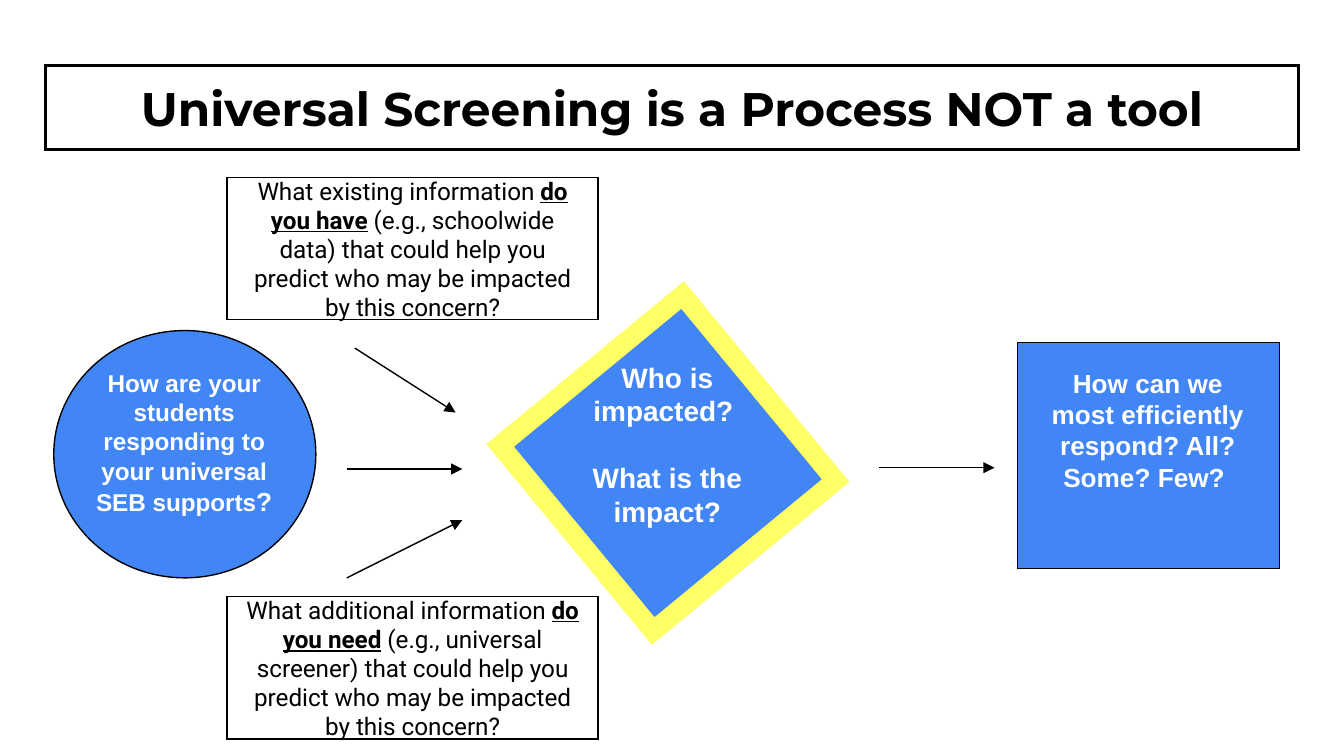
from dataclasses import dataclass

from pptx import Presentation
from pptx.dml.color import RGBColor
from pptx.enum.shapes import MSO_CONNECTOR, MSO_SHAPE
from pptx.enum.text import MSO_ANCHOR, MSO_AUTO_SIZE, PP_ALIGN
from pptx.oxml.ns import qn
from pptx.util import Inches, Pt
from lxml.etree import SubElement


@dataclass(frozen=True)
class Theme:
    """Colours, fonts and sizes of the slide."""
    ink: RGBColor = RGBColor(0x00, 0x00, 0x00)
    white: RGBColor = RGBColor(0xFF, 0xFF, 0xFF)
    blue: RGBColor = RGBColor(0x42, 0x85, 0xF4)
    yellow: RGBColor = RGBColor(0xFF, 0xFF, 0x66)
    title_font: str = "Montserrat"
    label_font: str = "Arial"
    note_font: str = "Roboto"
    title_size: float = 25.2
    small: float = 13
    medium: float = 14
    large: float = 15
    thin: float = 0.75
    frame: float = 1.5
    border: float = 10.5


THEME = Theme()


def set_outline(sp, color, width):
    """Give a shape a solid outline with sharp corners."""
    sp.line.color.rgb = color
    sp.line.width = Pt(width)
    SubElement(sp.line._get_or_add_ln(), qn("a:miter"), lim="800000")


def set_frame(tf, anchor, side, top):
    """Set wrapping, anchor and insets of a text frame."""
    tf.word_wrap = True
    tf.auto_size = MSO_AUTO_SIZE.NONE
    tf.vertical_anchor = anchor
    tf.margin_left = tf.margin_right = Inches(side)
    tf.margin_top = tf.margin_bottom = Inches(top)


def add_run(p, text, font, size, color, bold=False, underline=False):
    """Add one formatted run to a centred paragraph."""
    p.alignment = PP_ALIGN.CENTER
    r = p.add_run()
    r.text = text
    r.font.name = font
    r.font.size = Pt(size)
    r.font.color.rgb = color
    r.font.bold = bold
    r.font.underline = underline


def add_title(s, text):
    """Place and format the framed title."""
    sp = s.shapes.title
    sp.left, sp.top, sp.width, sp.height = map(Inches, (0.34, 0.49, 9.32, 0.62))
    set_outline(sp, THEME.ink, THEME.frame)
    set_frame(sp.text_frame, MSO_ANCHOR.MIDDLE, 0.1, 0.1)
    add_run(sp.text_frame.paragraphs[0], text, THEME.title_font,
            THEME.title_size, THEME.ink, bold=True)


def add_box(s, kind, box, fill=None, line=THEME.ink, width=THEME.thin, rotation=0):
    """Add an outlined shape, filled if a colour is given."""
    sp = s.shapes.add_shape(kind, *map(Inches, box))
    sp.shadow.inherit = False
    sp.rotation = rotation
    if fill is None:
        sp.fill.background()
    else:
        sp.fill.solid()
        sp.fill.fore_color.rgb = fill
    set_outline(sp, line, width)
    return sp


def add_label(s, box, paragraphs, gap=0):
    """Add a white bold label; each paragraph is a list of (text, size)."""
    tf = s.shapes.add_textbox(*map(Inches, box)).text_frame
    set_frame(tf, MSO_ANCHOR.TOP, 0.07, 0.04)
    for i, runs in enumerate(paragraphs):
        p = tf.add_paragraph() if i else tf.paragraphs[0]
        p.space_before = Pt(gap if i else 0)
        for text, size in runs:
            add_run(p, text, THEME.label_font, size, THEME.white, bold=True)


def add_note(s, top, before, stressed, after):
    """Add a framed question with a stressed middle part."""
    sp = add_box(s, MSO_SHAPE.RECTANGLE, (1.69, top, 2.76, 1.06))
    set_frame(sp.text_frame, MSO_ANCHOR.MIDDLE, 0.1, 0.1)
    p = sp.text_frame.paragraphs[0]
    for text, strong in ((before, False), (stressed, True), (after, False)):
        add_run(p, text, THEME.note_font, THEME.small, THEME.ink, strong, strong)


def add_arrow(s, *ends):
    """Add a thin arrow from (x1, y1) to (x2, y2)."""
    c = s.shapes.add_connector(MSO_CONNECTOR.STRAIGHT, *map(Inches, ends))
    c.line.color.rgb = THEME.ink
    c.line.width = Pt(THEME.thin)
    SubElement(c.line._get_or_add_ln(), qn("a:tailEnd"), type="triangle")
    SubElement(c._element.spPr, qn("a:effectLst"))


def main():
    """Build and save the slide."""
    prs = Presentation()
    prs.slide_width = Inches(10)
    prs.slide_height = Inches(10) * 9 // 16
    s = prs.slides.add_slide(prs.slide_layouts[5])
    add_title(s, "Universal Screening is a Process NOT a tool")

    add_box(s, MSO_SHAPE.OVAL, (0.4, 2.46, 1.95, 1.84), THEME.blue)
    add_label(s, (0.61, 2.7, 1.52, 1.29), [[
        ("How are your students responding to your universal SEB supports", THEME.small),
        ("?", THEME.medium)]])

    add_box(s, MSO_SHAPE.RECTANGLE, (4.09, 2.55, 1.76, 1.79), THEME.blue,
            THEME.yellow, THEME.border, 320.5)
    add_label(s, (4.22, 2.64, 1.49, 1.33), [
        [("Who is impacted? ", THEME.large)],
        [("What is the impact?", THEME.large)]], gap=18)

    add_box(s, MSO_SHAPE.RECTANGLE, (7.57, 2.55, 1.95, 1.68), THEME.blue)
    add_label(s, (7.67, 2.69, 1.74, 1.02), [[
        ("How can we most efficiently respond? All? Some? Few? ", THEME.medium)]])

    ending = " that could help you predict who may be impacted by this concern?"
    add_note(s, 1.32, "What existing information ", "do you have",
             " (e.g., schoolwide data)" + ending)
    add_note(s, 4.44, "What additional information ", "do you need",
             " (e.g., universal screener)" + ending)

    for ends in ((2.64, 2.59, 3.39, 3.07), (2.58, 3.49, 3.44, 3.49),
                 (2.58, 4.3, 3.44, 3.87), (6.54, 3.48, 7.4, 3.48)):
        add_arrow(s, *ends)

    prs.save("out.pptx")


if __name__ == "__main__":
    main()
